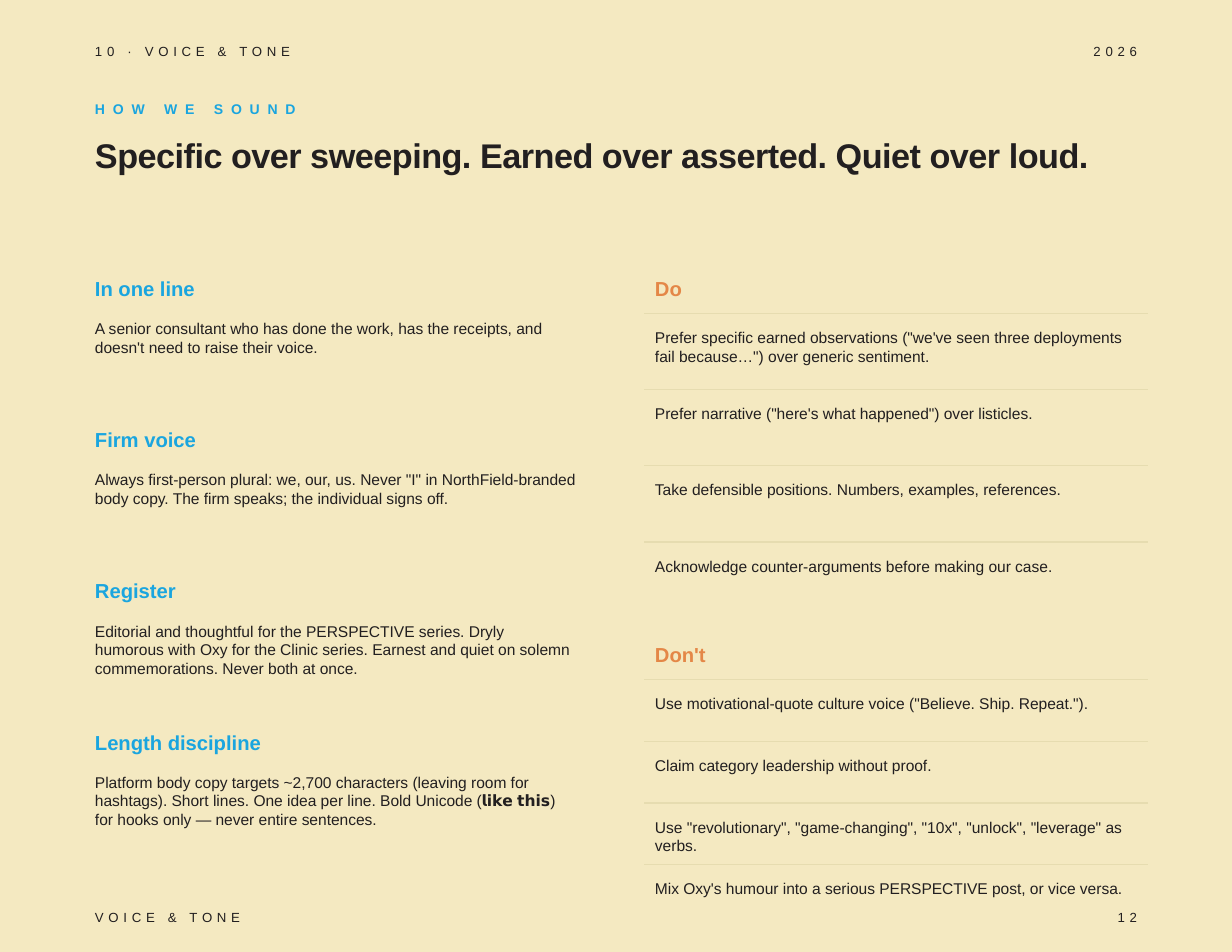
from pptx import Presentation
from pptx.dml.color import RGBColor as Rgb
from pptx.enum.shapes import MSO_CONNECTOR as Link
from pptx.enum.text import MSO_ANCHOR as Anchor, PP_ALIGN as Align
from pptx.oxml.ns import qn
from pptx.util import Pt
from lxml.etree import SubElement

HUES = {"sand": "F4E9C1", "ink": "221F20", "blue": "1AA5DF", "clay": "E48747", "rule": "E6DCB0"}
FORMS = {
    "label": {"size": Pt(8.5), "bold": False},
    "kicker": {"size": Pt(9), "bold": True},
    "title": {"size": Pt(22), "bold": True},
    "head": {"size": Pt(13), "bold": True},
    "body": {"size": Pt(10), "bold": False},
}
SPACING = {"label": 300, "kicker": 500, "title": -30}
LEFT, RIGHT, WIDE, TOP = 54, 414, 324, 172.8
VOICE = [
    ("In one line", "A senior consultant who has done the work, has the receipts, and doesn't need to raise their voice."),
    ("Firm voice", "Always first-person plural: we, our, us. Never \"I\" in NorthField-branded body copy. "
     "The firm speaks; the individual signs off."),
    ("Register", "Editorial and thoughtful for the PERSPECTIVE series. Dryly humorous with Oxy for the Clinic series. "
     "Earnest and quiet on solemn commemorations. Never both at once."),
    ("Length discipline", "Platform body copy targets ~2,700 characters (leaving room for hashtags). Short lines. "
     "One idea per line. Bold Unicode (𝗹𝗶𝗸𝗲 𝘁𝗵𝗶𝘀) for hooks only — never entire sentences."),
]
DO = [
    "Prefer specific earned observations (\"we've seen three deployments fail because…\") over generic sentiment.",
    "Prefer narrative (\"here's what happened\") over listicles.",
    "Take defensible positions. Numbers, examples, references.",
    "Acknowledge counter-arguments before making our case.",
]
DONT = [
    "Use motivational-quote culture voice (\"Believe. Ship. Repeat.\").",
    "Claim category leadership without proof.",
    "Use \"revolutionary\", \"game-changing\", \"10x\", \"unlock\", \"leverage\" as verbs.",
    "Mix Oxy's humour into a serious PERSPECTIVE post, or vice versa.",
]


class Page:
    """Draws styled elements on the current slide."""

    def __init__(self, deck):
        self.face = "Arial"
        self.slide = deck.slides.add_slide(deck.slide_layouts[6])
        fill = self.slide.background.fill
        fill.solid()
        fill.fore_color.rgb = self.hue("sand")

    def hue(self, name):
        return Rgb.from_string(HUES[name])

    def text(self, words, left, top, wide, high, form, hue="ink", mid=True, align=Align.LEFT, after=0):
        box = self.slide.shapes.add_textbox(Pt(left), Pt(top), Pt(wide), Pt(high))
        frame = box.text_frame
        frame.word_wrap = True
        frame.vertical_anchor = Anchor.MIDDLE if mid else Anchor.TOP
        para = frame.paragraphs[0]
        para.alignment = align
        para.space_after = Pt(after)
        run = para.add_run()
        run.text = words
        for key, value in {"name": self.face, **FORMS[form]}.items():
            setattr(run.font, key, value)
        run.font.color.rgb = self.hue(hue)
        if form in SPACING:
            run._r.get_or_add_rPr().set("spc", str(SPACING[form]))

    def rule(self, left, top, wide):
        line = self.slide.shapes.add_connector(Link.STRAIGHT, Pt(left), Pt(top), Pt(left + wide), Pt(top))
        line.line.color.rgb = self.hue("rule")
        line.line.width = Pt(0.75)
        SubElement(line._element.spPr, qn("a:effectLst"))

    def band(self, near, far, top):
        self.text(near, LEFT, top, 432, 20.16, "label")
        self.text(far, 468, top, 270, 20.16, "label", align=Align.RIGHT)

    def head(self, words, left, top, hue):
        self.text(words, left, top, WIDE, 25.2, "head", hue)

    def rows(self, title, items, top, step):
        self.head(title, RIGHT, top, "clay")
        for i, item in enumerate(items):
            y = top + 28.8 + i * step
            self.rule(RIGHT, y, WIDE)
            self.text(item, RIGHT, y + 5.76, WIDE, 43.2, "body", mid=False)


def main():
    deck = Presentation()
    deck.slide_width, deck.slide_height = Pt(792), Pt(612)
    page = Page(deck)
    page.band("10 · VOICE & TONE", "2026", 23.04)
    page.text("HOW WE SOUND", LEFT, 61.2, 432, 18, "kicker", "blue")
    page.text("Specific over sweeping. Earned over asserted. Quiet over loud.",
              LEFT, 82.8, 684, 64.8, "title", mid=False)
    for i, (title, words) in enumerate(VOICE):
        y = TOP + i * 97.2
        page.head(title, LEFT, y, "blue")
        page.text(words, LEFT, y + 28.8, WIDE, 79.2, "body", mid=False, after=6)
    page.rows("Do", DO, TOP, 48.96)
    page.rows("Don't", DONT, 408.24, 39.6)
    page.band("VOICE & TONE", "12", 579.6)
    deck.save("out.pptx")


if __name__ == "__main__":
    main()
